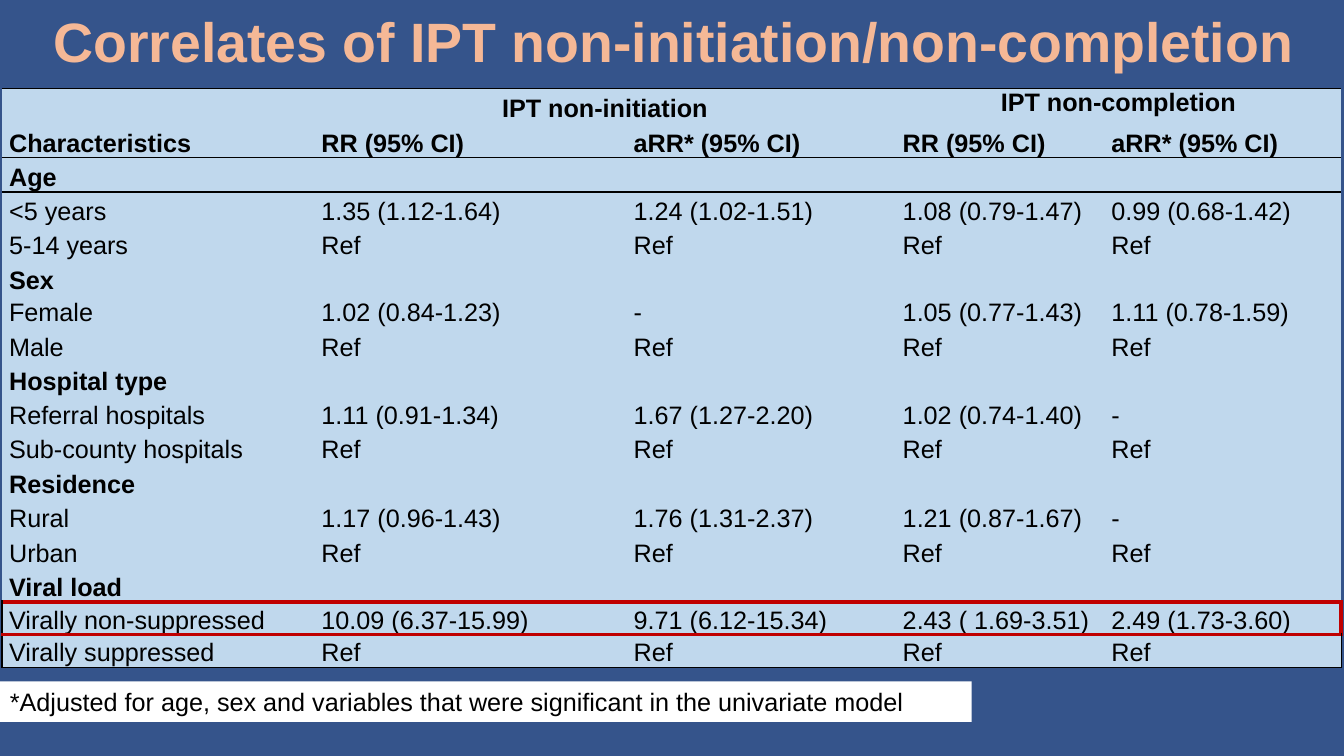
from lxml import etree
from pptx import Presentation
from pptx.dml.color import RGBColor
from pptx.enum.text import MSO_ANCHOR, PP_ALIGN
from pptx.oxml.ns import qn
from pptx.util import Cm, Pt

LEFT, CENTER = PP_ALIGN.LEFT, PP_ALIGN.CENTER
TOP, MIDDLE, BOTTOM = MSO_ANCHOR.TOP, MSO_ANCHOR.MIDDLE, MSO_ANCHOR.BOTTOM

FONT = "Arial"
NAVY, PEACH, PALE_BLUE = "35548B", "F5B896", "C0D8ED"
BLACK, WHITE, RED = "000000", "FFFFFF", "C00000"
NO_STYLE_NO_GRID = "{2D5ABB26-0587-4C30-8999-92F81FD0307C}"

COLUMN_WIDTHS = [7.87, 7.87, 6.78, 5.26, 5.97]
ROW_HEIGHT = 0.87
LOWER_ROWS = {3: 0.84, 6: 0.82, 9: 0.84, 15: 0.82, 16: 0.82}

REF = ["Ref"] * 4
ROWS = [
    ["", "IPT non-initiation", "", "IPT non-completion", ""],
    ["Characteristics"] + ["RR (95% CI)", "aRR* (95% CI)"] * 2,
    ["Age"],
    ["<5 years", "1.35 (1.12-1.64)", "1.24 (1.02-1.51)", "1.08 (0.79-1.47)", "0.99 (0.68-1.42)"],
    ["5-14 years"] + REF,
    ["Sex"],
    ["Female", "1.02 (0.84-1.23)", "-", "1.05 (0.77-1.43)", "1.11 (0.78-1.59)"],
    ["Male"] + REF,
    ["Hospital type"],
    ["Referral hospitals", "1.11 (0.91-1.34)", "1.67 (1.27-2.20)", "1.02 (0.74-1.40)", "-"],
    ["Sub-county hospitals"] + REF,
    ["Residence"],
    ["Rural", "1.17 (0.96-1.43)", "1.76 (1.31-2.37)", "1.21 (0.87-1.67)", "-"],
    ["Urban"] + REF,
    ["Viral load"],
    ["Virally non-suppressed", "10.09 (6.37-15.99)", "9.71 (6.12-15.34)",
     "2.43 ( 1.69-3.51)", "2.49 (1.73-3.60)"],
    ["Virally suppressed"] + REF,
]
HEADER_ROWS = 2
HIGHLIGHT_ROW = 15
LAST_ROW, LAST_COLUMN = len(ROWS) - 1, len(COLUMN_WIDTHS) - 1

THIN, THICK = (BLACK, 1), (RED, 3)
RULES = {0: THIN, HEADER_ROWS: THIN, HIGHLIGHT_ROW: THICK,
         HIGHLIGHT_ROW + 1: THICK, LAST_ROW + 1: THIN}


def color(hex_string):
    return RGBColor.from_string(hex_string)


def paint(fill, hex_string):
    fill.solid()
    fill.fore_color.rgb = color(hex_string)


def add_run(paragraph, text, size=18, hex_string=BLACK, bold=False):
    run = paragraph.add_run()
    run.text = text
    run.font.name = FONT
    run.font.size = Pt(size)
    run.font.bold = bold
    run.font.color.rgb = color(hex_string)


def cell_borders(row, column):
    sides = {"lnT": RULES.get(row), "lnB": RULES.get(row + 1)}
    if row >= HIGHLIGHT_ROW:
        if column == 0:
            sides["lnL"] = THIN
        if column == LAST_COLUMN:
            sides["lnR"] = THICK if row == HIGHLIGHT_ROW else THIN
    return sides


def draw_borders(cell, sides):
    properties = cell._tc.get_or_add_tcPr()
    position = 0
    for side in ("lnL", "lnR", "lnT", "lnB"):
        if sides.get(side):
            hex_string, width = sides[side]
            line = etree.Element(qn(f"a:{side}"), w=str(Pt(width)))
            fill = etree.SubElement(line, qn("a:solidFill"))
            etree.SubElement(fill, qn("a:srgbClr"), val=hex_string)
            properties.insert(position, line)
            position += 1


def fill_cell(cell, text, row, column, bold):
    cell.margin_left = cell.margin_right = Cm(0.18)
    cell.margin_top = cell.margin_bottom = 0
    cell.vertical_anchor = TOP if row == 0 and column == 3 else BOTTOM
    paint(cell.fill, PALE_BLUE)
    draw_borders(cell, cell_borders(row, column))
    paragraph = cell.text_frame.paragraphs[0]
    paragraph.alignment = CENTER if row == 0 else LEFT
    if text:
        add_run(paragraph, text, bold=bold)


def add_correlates(slide):
    frame = slide.shapes.add_table(len(ROWS), len(COLUMN_WIDTHS), Cm(0.05), Cm(2.23),
                                   Cm(sum(COLUMN_WIDTHS)), Cm(14.58))
    table = frame.table
    table.first_row = table.horz_banding = False
    table._tbl.tblPr.find(qn("a:tableStyleId")).text = NO_STYLE_NO_GRID
    for column, width in zip(table.columns, COLUMN_WIDTHS):
        column.width = Cm(width)
    for first in (1, 3):
        table.cell(0, first).merge(table.cell(0, first + 1))
    for row, values in enumerate(ROWS):
        table.rows[row].height = Cm(LOWER_ROWS.get(row, ROW_HEIGHT))
        bold = row < HEADER_ROWS or len(values) == 1
        for column in range(len(COLUMN_WIDTHS)):
            text = values[column] if column < len(values) else ""
            fill_cell(table.cell(row, column), text, row, column, bold)


def set_title(slide, text):
    title = slide.shapes.title
    title.left, title.top, title.width, title.height = Cm(1.09), Cm(0.03), Cm(33.17), Cm(2.16)
    title.text_frame.vertical_anchor = MIDDLE
    paragraph = title.text_frame.paragraphs[0]
    paragraph.alignment = LEFT
    paragraph.line_spacing = 0.9
    add_run(paragraph, text, 39.6, PEACH, True)


def add_footnote(slide, text):
    footnote = slide.shapes.add_textbox(0, Cm(17.17), Cm(24.49), Cm(1.02))
    footnote.text_frame.word_wrap = True
    paint(footnote.fill, WHITE)
    add_run(footnote.text_frame.paragraphs[0], text)


def main():
    deck = Presentation()
    deck.slide_width, deck.slide_height = Cm(33.87), Cm(19.05)
    slide = deck.slides.add_slide(deck.slide_layouts[5])
    paint(slide.background.fill, NAVY)
    set_title(slide, "Correlates of IPT non-initiation/non-completion")
    add_correlates(slide)
    add_footnote(slide, "*Adjusted for age, sex and variables that were significant "
                        "in the univariate model")
    deck.save("out.pptx")


if __name__ == "__main__":
    main()
